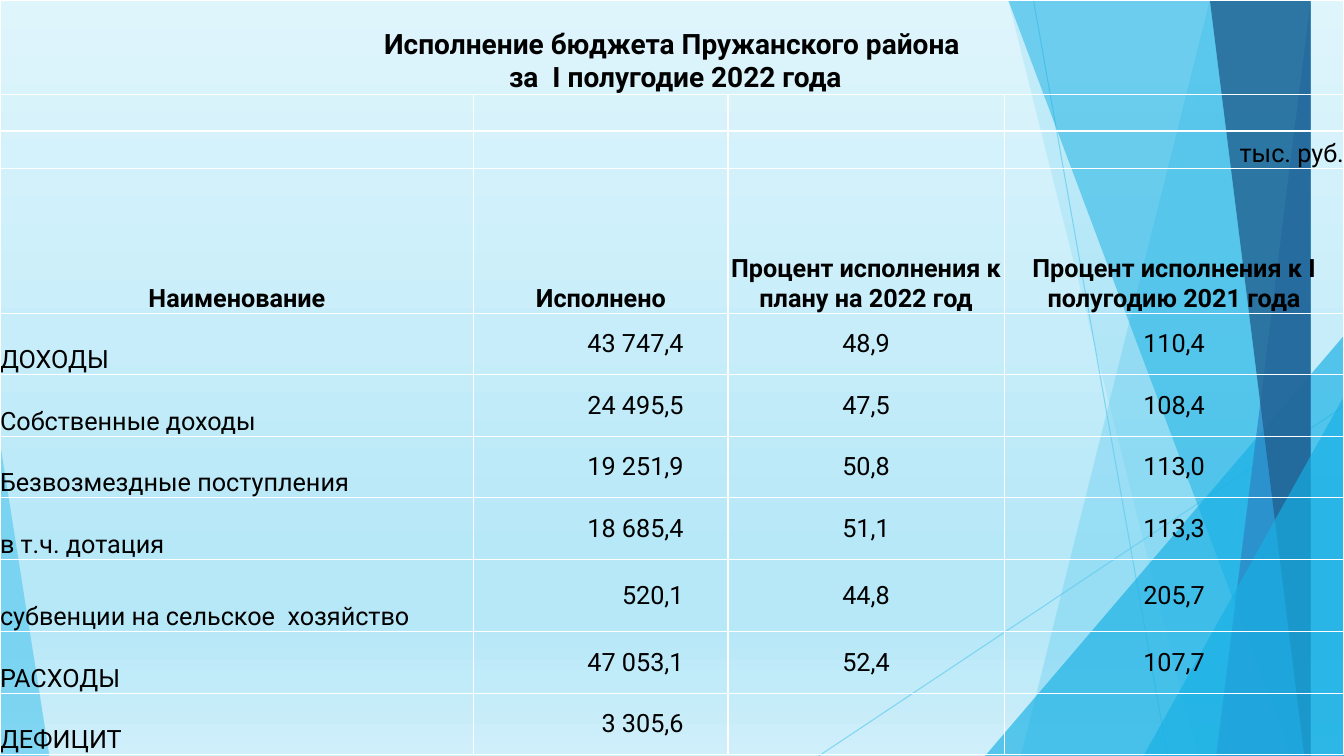
from dataclasses import dataclass

from lxml import etree
from pptx import Presentation
from pptx.dml.color import RGBColor
from pptx.enum.shapes import MSO_CONNECTOR, MSO_SHAPE
from pptx.enum.text import MSO_ANCHOR, PP_ALIGN
from pptx.oxml import parse_xml
from pptx.oxml.ns import nsdecls, qn
from pptx.util import Inches, Pt

LEFT, CENTER, RIGHT = PP_ALIGN.LEFT, PP_ALIGN.CENTER, PP_ALIGN.RIGHT
BOTTOM, MIDDLE = MSO_ANCHOR.BOTTOM, MSO_ANCHOR.MIDDLE
TRIANGLE, STRAIGHT = MSO_SHAPE.ISOSCELES_TRIANGLE, MSO_CONNECTOR.STRAIGHT


@dataclass(frozen=True)
class Theme:
    font: str = "Roboto"
    title_size: int = 20
    body_size: int = 18
    text: str = "000000"
    grid: str = "FFFFFF"
    sky: str = "5FCBEF"
    cyan: str = "17B0E4"
    blue: str = "2E83C3"
    navy: str = "226292"
    backdrop: tuple = ((0, "DFF5FC"), (74, "B7E8F8"), (83, "B7E8F8"), (100, "CFEFFA"))


theme = Theme()
WIDTH, HEIGHT = 13.33, 7.5


def paint(fill, colour, opacity):
    """Apply a solid colour with opacity in percent."""
    fill.solid()
    fill.fore_color.rgb = RGBColor.from_string(colour)
    for clr in fill._xPr.iter(qn("a:srgbClr")):
        etree.SubElement(clr, qn("a:alpha")).set("val", str(opacity * 1000))


def write(cell, lines, align, anchor, bold=False, size=theme.body_size):
    cell.vertical_anchor = anchor
    paragraph = cell.text_frame.paragraphs[0]
    paragraph.alignment = align
    for number, line in enumerate(lines):
        if number:
            paragraph.add_line_break()
        run = paragraph.add_run()
        run.text = line
        run.font.name = theme.font
        run.font.size = Pt(size)
        run.font.bold = bold
        run.font.color.rgb = RGBColor.from_string(theme.text)


prs = Presentation()
prs.slide_width, prs.slide_height = Inches(WIDTH), Inches(HEIGHT)
slide = prs.slides.add_slide(prs.slide_layouts[6])

# Backdrop gradient, top to bottom
backdrop = slide.background.fill
backdrop.gradient()
gradient = backdrop._xPr.find(qn("a:gradFill"))
gradient.find(qn("a:lin")).set("ang", "5400000")
stops = gradient.find(qn("a:gsLst"))
for stop in list(stops):
    stops.remove(stop)
for position, colour in theme.backdrop:
    stop = etree.SubElement(stops, qn("a:gs"), pos=str(position * 1000))
    etree.SubElement(stop, qn("a:srgbClr"), val=colour)

# Thin rays
for x1, y1, x2, y2 in [(10.25, 0, 11.58, HEIGHT), (WIDTH, 4.03, 8.12, HEIGHT)]:
    ray = slide.shapes.add_connector(STRAIGHT, Inches(x1), Inches(y1), Inches(x2), Inches(y2))
    ray.line.width = Pt(0.75)
    paint(ray.line.fill, theme.sky, 70)
    etree.SubElement(ray._element.spPr, qn("a:effectLst"))

# Facets from back to front: a band gives its left edge at top and bottom and
# runs to the right side; a wedge gives left, top, width and apex position
facets = [
    ("band", (12.28, 10.04), theme.sky, 36),
    ("band", (10.5, 11.83), theme.sky, 20),
    ("wedge", (9.77, 3.33, 3.56, 1), theme.cyan, 66),
    ("band", (10.21, 12.91), theme.cyan, 50),
    ("band", (13.03, 11.92), theme.blue, 70),
    ("band", (11.96, 13.18), theme.navy, 80),
    ("wedge", (11.34, 3.93, 1.99, 1), theme.cyan, 66),
    ("wedge", (0, 4.39, 0.49, 0), theme.sky, 70),
]
for kind, outline, colour, opacity in facets:
    if kind == "band":
        top_x, bottom_x = outline
        builder = slide.shapes.build_freeform(top_x, 0, scale=Inches(1))
        builder.add_line_segments([(WIDTH, 0), (WIDTH, HEIGHT), (bottom_x, HEIGHT)])
        facet = builder.convert_to_shape()
    else:
        left, top, width, apex = outline
        facet = slide.shapes.add_shape(
            TRIANGLE, Inches(left), Inches(top), Inches(width), Inches(HEIGHT - top))
        facet.adjustments[0] = apex
    facet.shadow.inherit = False
    facet.line.fill.background()
    paint(facet.fill, colour, opacity)

# Budget table
column_widths = [4.7, 2.52, 2.74, 3.37]
row_heights = [0.94, 0.36, 0.37, 1.44] + [0.61] * 4 + [0.72] + [0.61] * 2
headings = ["Наименование", "Исполнено", "Процент исполнения к плану на 2022 год",
            "Процент исполнения к I полугодию 2021 года"]
budget = [
    ("ДОХОДЫ", "43 747,4", "48,9", "110,4"),
    ("Собственные доходы", "24 495,5", "47,5", "108,4"),
    ("Безвозмездные поступления", "19 251,9", "50,8", "113,0"),
    ("в т.ч. дотация", "18 685,4", "51,1", "113,3"),
    ("субвенции на сельское  хозяйство", "520,1", "44,8", "205,7"),
    ("РАСХОДЫ", "47 053,1", "52,4", "107,7"),
    ("ДЕФИЦИТ", "3 305,6"),
]
table = slide.shapes.add_table(
    len(row_heights), len(column_widths), 0, 0, Inches(WIDTH), Inches(HEIGHT)).table
table.first_row = table.horz_banding = False
for column, width in zip(table.columns, column_widths):
    column.width = Inches(width)
for row, height in zip(table.rows, row_heights):
    row.height = Inches(height)

for cell in table.iter_cells():
    cell.margin_left = cell.margin_right = cell.margin_top = cell.margin_bottom = 0
    cell.fill.background()
    for index, side in enumerate(("lnL", "lnR", "lnT", "lnB")):
        cell._tc.tcPr.insert(index, parse_xml(
            f'<a:{side} {nsdecls("a")} w="{Pt(1)}"><a:solidFill>'
            f'<a:srgbClr val="{theme.grid}"/></a:solidFill></a:{side}>'))

table.cell(0, 0).merge(table.cell(0, 3))
write(table.cell(0, 0), ["Исполнение бюджета Пружанского района", " за  I полугодие 2022 года"],
      CENTER, BOTTOM, bold=True, size=theme.title_size)
write(table.cell(2, 3), ["тыс. руб."], RIGHT, BOTTOM)
for col, heading in enumerate(headings):
    write(table.cell(3, col), [heading], CENTER, BOTTOM, bold=True)

column_styles = [(LEFT, BOTTOM), (RIGHT, MIDDLE), (CENTER, MIDDLE), (CENTER, MIDDLE)]
for row, entries in enumerate(budget, start=4):
    for col, (entry, (align, anchor)) in enumerate(zip(entries, column_styles)):
        write(table.cell(row, col), [entry], align, anchor)
    table.cell(row, 1).margin_right = Inches(0.44)

prs.save("out.pptx")
